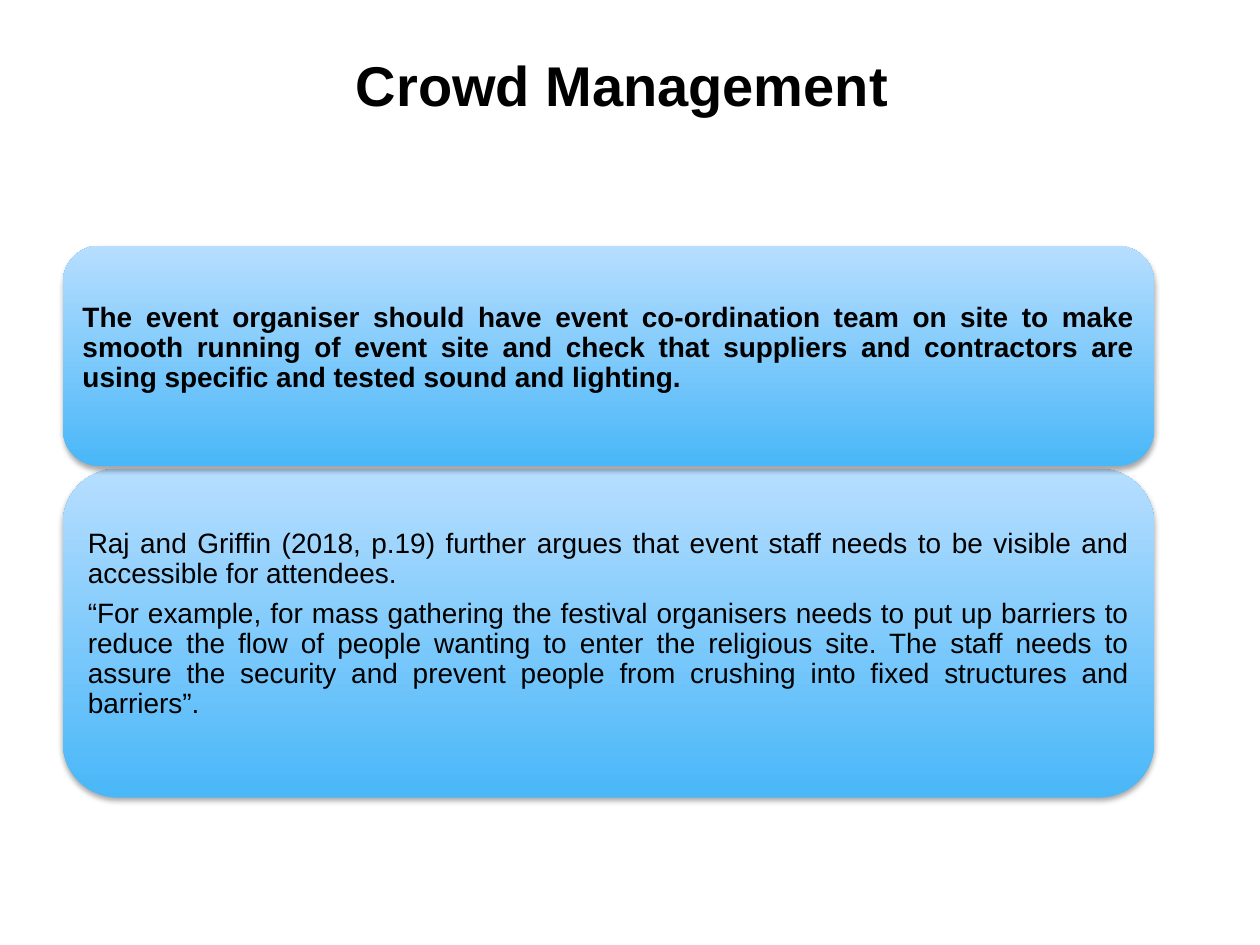
from lxml import etree
from pptx import Presentation
from pptx.dml.color import RGBColor
from pptx.enum import shapes, text
from pptx.oxml import ns
from pptx.util import Inches, Pt

TITLE = "Crowd Management "
ORGANISER = [
    "The event organiser should have event co-ordination team on site to make "
    "smooth running of event site and check that suppliers and contractors are "
    "using specific and tested sound and lighting. "
]
STAFF = [
    "Raj and Griffin (2018, p.19) further argues that event staff needs to be "
    "visible and accessible for attendees. ",
    "“For example, for mass gathering the festival organisers needs to put up "
    "barriers to reduce the flow of people wanting to enter the religious site. "
    "The staff needs to assure the security and prevent people from crushing "
    "into fixed structures and barriers”.",
]
GRADIENT = ["49B7F8", "B7DEFF"]
PANEL_LEFT, PANEL_WIDTH = 0.5, 8.66


def color(value):
    return RGBColor.from_string(value)


def set_values(target, values):
    for name, value in values.items():
        setattr(target, name, value)


def write_paragraphs(frame, contents, size, bold, layout):
    for index, content in enumerate(contents):
        paragraph = frame.paragraphs[0] if index == 0 else frame.add_paragraph()
        set_values(paragraph, layout)
        run = paragraph.add_run()
        run.text = content
        set_values(run.font, {"name": "Arial", "size": Pt(size), "bold": bold})
        run.font.color.rgb = color("000000")


def add_soft_shadow(shape):
    shape.shadow.inherit = False
    effects = shape._element.spPr.find(ns.qn("a:effectLst"))
    shadow = etree.SubElement(
        effects, ns.qn("a:outerShdw"), blurRad=str(Pt(3.1)), dist=str(Pt(1.8)),
        dir="5400000", rotWithShape="0")
    black = etree.SubElement(shadow, ns.qn("a:srgbClr"), val="000000")
    etree.SubElement(black, ns.qn("a:alpha"), val="35000")


def add_title(slide):
    title = slide.shapes.title
    set_values(title, {"left": Inches(0.5), "top": Inches(0.3),
                       "width": Inches(9), "height": Inches(1.19)})
    set_values(title.text_frame, {"vertical_anchor": text.MSO_ANCHOR.TOP,
                                  "margin_top": Inches(0.1)})
    write_paragraphs(title.text_frame, [TITLE], 32, True,
                     {"alignment": text.PP_ALIGN.CENTER})


def add_panel(slide, top, height, text_inset, contents, bold=False):
    panel = slide.shapes.add_shape(
        shapes.MSO_SHAPE.ROUNDED_RECTANGLE, Inches(PANEL_LEFT), Inches(top),
        Inches(PANEL_WIDTH), Inches(height))
    panel.fill.gradient()
    panel.fill.gradient_angle = 90
    for position, (stop, value) in enumerate(zip(panel.fill.gradient_stops, GRADIENT)):
        stop.position = position
        stop.color.rgb = color(value)
    panel.line.fill.background()
    add_soft_shadow(panel)
    set_values(panel.text_frame, {
        "word_wrap": True, "vertical_anchor": text.MSO_ANCHOR.TOP,
        "margin_left": Inches(0.07), "margin_right": Inches(0.07),
        "margin_top": Inches(text_inset), "margin_bottom": Inches(0.07)})
    write_paragraphs(panel.text_frame, contents, 16, bold, {
        "alignment": text.PP_ALIGN.JUSTIFY, "line_spacing": 0.9,
        "space_after": Pt(5.6)})


def main():
    presentation = Presentation()
    set_values(presentation, {"slide_width": Inches(10), "slide_height": Inches(7.5)})
    slide = presentation.slides.add_slide(presentation.slide_layouts[5])
    add_title(slide)
    add_panel(slide, 3.72, 2.61, 0.35, STAFF)
    add_panel(slide, 1.95, 1.75, 0.37, ORGANISER, bold=True)
    presentation.save("out.pptx")


if __name__ == "__main__":
    main()
